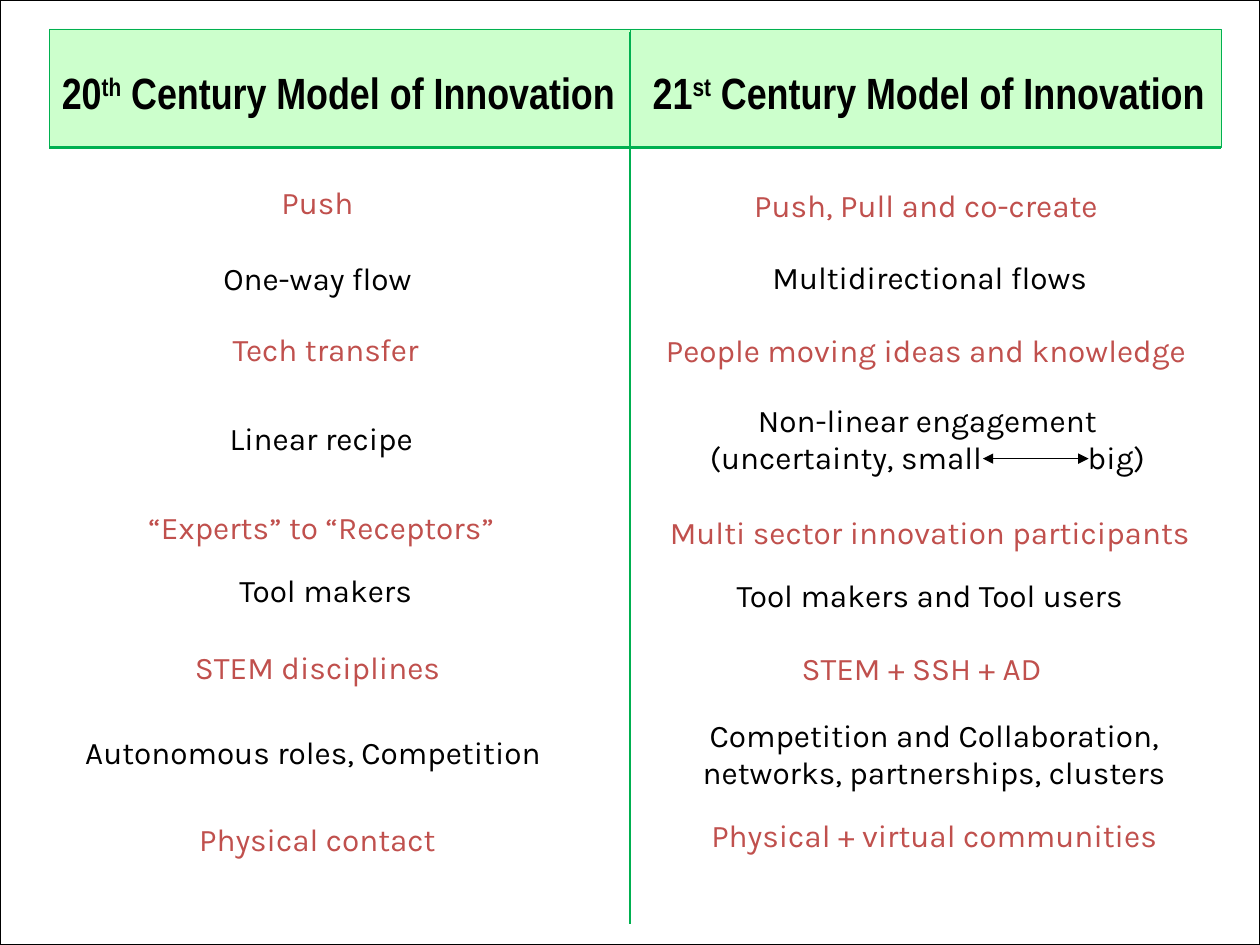
from pptx import Presentation
from pptx import util as u
from pptx.dml.color import RGBColor
from pptx.enum import shapes, text
from pptx.oxml import parse_xml
from pptx.oxml.ns import nsdecls, qn

BLACK, RED, GREEN, MINT = "000000", "C0504D", "00B050", "CCFFCC"

LEFT = [
    (1.4, 0.13, "Push"),
    (2.01, 0.13, "One-way flow"),
    (2.57, 0, "Tech transfer"),
    (3.28, 0.07, "Linear recipe"),
    (3.98, 0.07, "“Experts” to “Receptors”"),
    (4.48, 0, "Tool makers"),
    (5.09, 0.13, "STEM disciplines"),
    (5.77, 0.2, "Autonomous roles, Competition"),
    (6.46, 0.13, "Physical contact"),
]
RIGHT = [
    (1.43, 0.13, "Push, Pull and co-create"),
    (2, 0.07, "Multidirectional flows"),
    (2.58, 0.13, "People moving ideas and knowledge"),
    (3.13, 0.11, "Non-linear engagement\v(uncertainty, small| |big)"),
    (4.02, 0.07, "Multi sector innovation participants"),
    (4.52, 0.07, "Tool makers and Tool users"),
    (5.1, 0.2, "STEM + SSH + AD"),
    (5.63, 0, "Competition and Collaboration, networks, partnerships, clusters"),
    (6.43, 0, "Physical + virtual communities"),
]


def paint(color):
    return RGBColor.from_string(color)


def style(run, size, face, color, bold=False):
    font = run.font
    font.size, font.name, font.bold = u.Pt(size), face, bold
    font.color.rgb = paint(color)


def border(shape, color, width):
    shape.line.color.rgb = paint(color)
    shape.line.width = u.Pt(width)


def frame(slide, box):
    rect = slide.shapes.add_shape(shapes.MSO_SHAPE.RECTANGLE, *map(u.Inches, box))
    rect.shadow.inherit = False
    rect.fill.background()
    border(rect, BLACK, 0.75)


def head(holder, box, inset, parts):
    holder.left, holder.top, holder.width, holder.height = map(u.Inches, box)
    holder.fill.solid()
    holder.fill.fore_color.rgb = paint(MINT)
    border(holder, GREEN, 0.25)
    body = holder.text_frame
    body.auto_size = text.MSO_AUTO_SIZE.NONE
    body.word_wrap = True
    body.vertical_anchor = text.MSO_ANCHOR.TOP
    body.margin_left, body.margin_right = u.Inches(inset), 0
    body.margin_top = u.Inches(0.29)
    para = body.paragraphs[0]
    para.space_before = u.Pt(0)
    for part in parts:
        run = para.add_run()
        run.text = part
        style(run, 25, "Arial Narrow", BLACK, True)
    para.runs[1].font._element.set("baseline", "30000")


def column(slide, left, width, rows):
    for i, (top, trim, words) in enumerate(rows):
        tall = 0.7 if "\v" in words or len(words) > 40 else 0.4
        box = slide.shapes.add_textbox(*map(u.Inches, (left, top, width - trim, tall)))
        box.text_frame.word_wrap = True
        para = box.text_frame.paragraphs[0]
        para.alignment = text.PP_ALIGN.CENTER
        first, *rest = words.split("|")
        para.text = first
        for part in rest:
            para.add_run().text = part
        for run in para.runs:
            style(run, 18, "Karla", BLACK if i % 2 else RED)
            if run.text == " ":
                run.font._element.set("spc", "5600")


def rule(slide, ends, color, width, arrow=False):
    line = slide.shapes.add_connector(shapes.MSO_CONNECTOR.STRAIGHT, *map(u.Inches, ends))
    border(line, color, width)
    if arrow:
        for end in ("headEnd", "tailEnd"):
            line.line._get_or_add_ln().append(
                parse_xml(f'<a:{end} {nsdecls("a")} type="triangle"/>'))
    line._element.find(qn("p:spPr")).append(parse_xml(f'<a:effectLst {nsdecls("a")}/>'))


def main():
    deck = Presentation()
    deck.slide_width, deck.slide_height = u.Inches(10), u.Inches(7.5)
    slide = deck.slides.add_slide(deck.slide_layouts[4])
    heads = {1: ((0.39, 0.23, 4.61, 0.94), 0.1, "20", "th"),
             3: ((5, 0.23, 4.69, 0.94), 0.18, "21", "st")}
    for holder in list(slide.placeholders):
        key = holder.placeholder_format.idx
        if key in heads:
            box, inset, number, suffix = heads[key]
            head(holder, box, inset, (number, suffix, " Century Model of Innovation"))
        else:
            holder._element.getparent().remove(holder._element)
    frame(slide, (0, 0, 10, 7.5))
    column(slide, 0, 5.17, LEFT)
    column(slide, 5, 4.83, RIGHT)
    rule(slide, (7.8, 3.64, 8.64, 3.64), BLACK, 0.75, True)
    rule(slide, (5, 0.25, 5, 7.33), GREEN, 1.5)
    rule(slide, (0.39, 1.17, 9.69, 1.17), GREEN, 1.5)
    deck.save("out.pptx")


if __name__ == "__main__":
    main()
